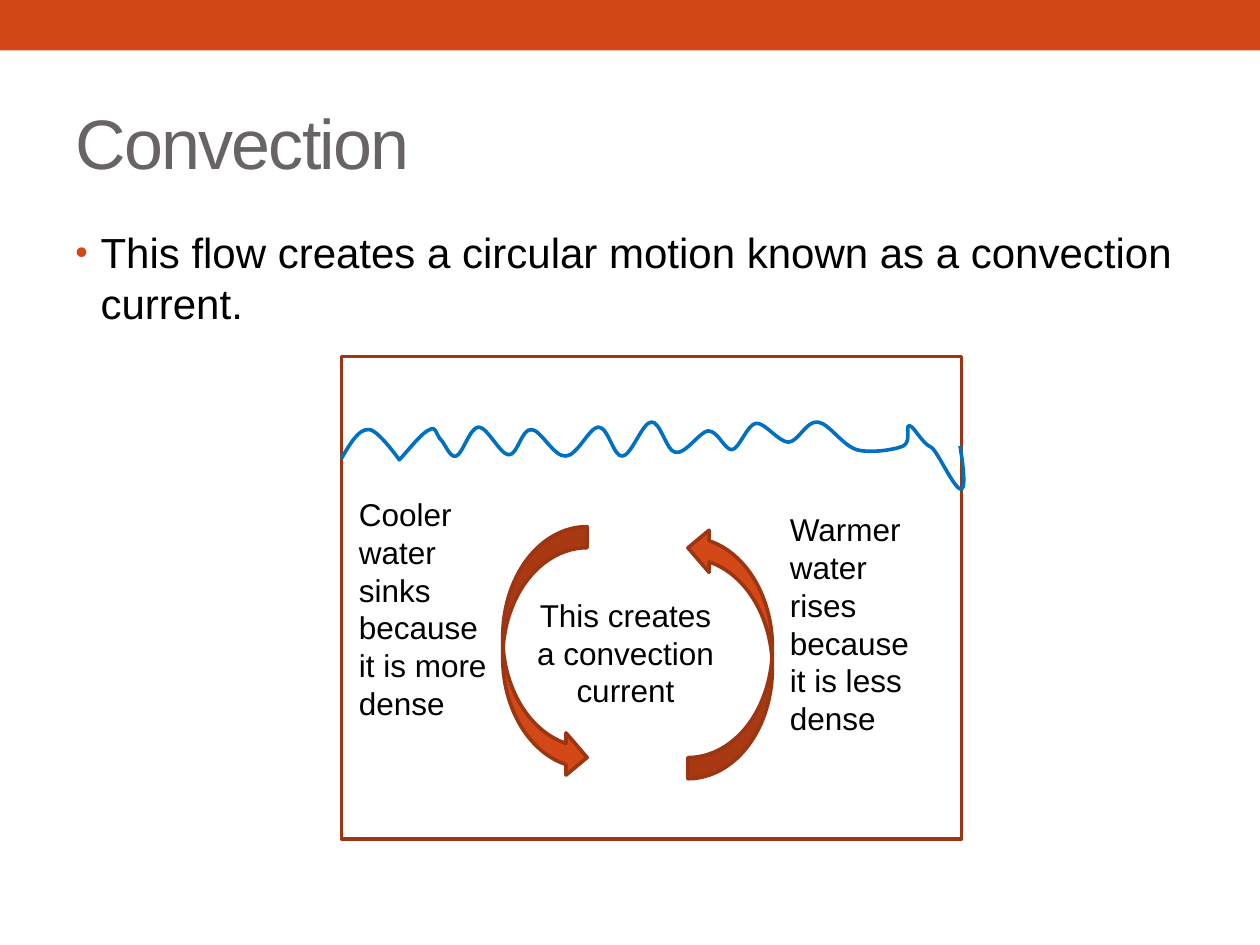
from dataclasses import dataclass

from lxml import etree
from pptx import Presentation
from pptx.dml.color import RGBColor
from pptx.enum.shapes import MSO_SHAPE
from pptx.enum.text import MSO_ANCHOR, PP_ALIGN
from pptx.oxml.ns import qn
from pptx.util import Inches, Pt

RECTANGLE = MSO_SHAPE.RECTANGLE
CURVED_ARROW = MSO_SHAPE.CURVED_RIGHT_ARROW
LEFT, CENTER = PP_ALIGN.LEFT, PP_ALIGN.CENTER
TOP, MIDDLE = MSO_ANCHOR.TOP, MSO_ANCHOR.MIDDLE

COLORS = {
    "accent": "D34817",
    "outline": "9C3511",
    "water": "0070C0",
    "title": "696464",
    "text": "000000",
}
FONT = "Arial"
LINE_WIDTH = 2.08

WAVE_START = (2.71, 3.64)
WAVE_CURVES = [
    (2.78, 3.52, 2.85, 3.4, 2.93, 3.41), (3, 3.41, 3.17, 3.65, 3.17, 3.65),
    (3.21, 3.61, 3.35, 3.43, 3.41, 3.41), (3.46, 3.38, 3.46, 3.44, 3.49, 3.48),
    (3.53, 3.51, 3.57, 3.64, 3.62, 3.62), (3.67, 3.61, 3.73, 3.39, 3.8, 3.39),
    (3.87, 3.39, 3.97, 3.61, 4.04, 3.61), (4.11, 3.61, 4.14, 3.4, 4.22, 3.41),
    (4.29, 3.41, 4.4, 3.63, 4.49, 3.62), (4.58, 3.62, 4.68, 3.39, 4.75, 3.39),
    (4.83, 3.39, 4.87, 3.63, 4.94, 3.62), (5.01, 3.62, 5.1, 3.35, 5.17, 3.35),
    (5.24, 3.34, 5.29, 3.58, 5.36, 3.59), (5.44, 3.61, 5.55, 3.43, 5.62, 3.42),
    (5.7, 3.42, 5.75, 3.57, 5.81, 3.57), (5.87, 3.56, 5.93, 3.37, 6, 3.36),
    (6.07, 3.35, 6.18, 3.51, 6.26, 3.51), (6.34, 3.5, 6.4, 3.34, 6.49, 3.35),
    (6.58, 3.36, 6.68, 3.53, 6.8, 3.57), (6.91, 3.6, 7.1, 3.57, 7.17, 3.54),
    (7.24, 3.5, 7.18, 3.37, 7.22, 3.38), (7.25, 3.38, 7.32, 3.52, 7.39, 3.55),
    (7.46, 3.58, 7.74, 4.29, 7.62, 3.54),
]


@dataclass
class Area:
    left: float
    top: float
    width: float
    height: float

    def lengths(self):
        return [Inches(n) for n in (self.left, self.top, self.width, self.height)]


@dataclass
class Label:
    text: str
    area: Area
    align: PP_ALIGN = LEFT


@dataclass
class Figure:
    kind: MSO_SHAPE
    area: Area
    fill: str = ""
    line: str = ""
    rotation: float = 0


LABELS = [
    Label("Cooler water sinks because it is more dense", Area(2.75, 3.88, 1.33, 1.92)),
    Label("Warmer water rises because it is less dense", Area(6.17, 4, 1.25, 1.92)),
    Label("This creates a convection current", Area(4.13, 4.68, 1.67, 1.01), CENTER),
]
BAND = Figure(RECTANGLE, Area(0, 0, 10, 0.4), fill="accent")
TANK = Figure(RECTANGLE, Area(2.71, 2.83, 4.92, 3.83), line="outline")
WAVE_AREA = Area(2.71, 3.35, 4.94, 0.53)
ARROWS = [
    Figure(CURVED_ARROW, Area(left, 4.18, 0.67, 2), "accent", "outline", rotation)
    for left, rotation in ((3.99, 0), (5.46, 180))
]


def color(name: str) -> RGBColor:
    return RGBColor.from_string(COLORS[name])


def style_shape(shape, fill: str = "", line: str = "") -> None:
    shape.shadow.inherit = False
    if fill:
        shape.fill.solid()
        shape.fill.fore_color.rgb = color(fill)
    else:
        shape.fill.background()
    if line:
        shape.line.color.rgb = color(line)
        shape.line.width = Pt(LINE_WIDTH)
    else:
        shape.line.fill.background()


def draw_figure(page, figure: Figure) -> None:
    shape = page.shapes.add_shape(figure.kind, *figure.area.lengths())
    shape.rotation = figure.rotation
    style_shape(shape, figure.fill, figure.line)


def draw_wave(page) -> None:
    builder = page.shapes.build_freeform(*[Inches(n) for n in WAVE_START])
    anchors = [tuple(Inches(n) for n in curve[-2:]) for curve in WAVE_CURVES]
    builder.add_line_segments(anchors, close=False)
    wave = builder.convert_to_shape()
    left, top, wave.width, wave.height = WAVE_AREA.lengths()
    outline = next(wave._element.iter(qn("a:path")))
    outline.set("w", str(wave.width))
    outline.set("h", str(wave.height))
    for segment, curve in zip(outline.findall(qn("a:lnTo")), WAVE_CURVES):
        bezier = etree.Element(qn("a:cubicBezTo"))
        for x, y in zip(curve[::2], curve[1::2]):
            etree.SubElement(bezier, qn("a:pt"),
                             x=str(Inches(x) - left), y=str(Inches(y) - top))
        outline.replace(segment, bezier)
    style_shape(wave, line="water")


def add_text(page, text: str, area: Area, *, size: float = 18, ink: str = "text",
             align: PP_ALIGN = LEFT, anchor: MSO_ANCHOR = TOP, tracking: float = 0):
    box = page.shapes.add_textbox(*area.lengths())
    frame = box.text_frame
    frame.word_wrap = True
    frame.vertical_anchor = anchor
    para = frame.paragraphs[0]
    para.alignment = align
    span = para.add_run()
    span.text = text
    span.font.name = FONT
    span.font.size = Pt(size)
    span.font.color.rgb = color(ink)
    if tracking:
        span.font._element.set("spc", str(round(tracking * 100)))
    return para


def add_bullet(para, indent: float, ink: str, percent: int) -> None:
    properties = para._p.get_or_add_pPr()
    properties.set("marL", str(Inches(indent)))
    properties.set("indent", str(-Inches(indent)))
    bullet_color = etree.SubElement(properties, qn("a:buClr"))
    etree.SubElement(bullet_color, qn("a:srgbClr"), val=COLORS[ink])
    etree.SubElement(properties, qn("a:buSzPct"), val=str(percent * 1000))
    etree.SubElement(properties, qn("a:buFont"), typeface=FONT)
    etree.SubElement(properties, qn("a:buChar"), char="•")


def main() -> None:
    """Build the convection slide and save it."""
    deck = Presentation()
    deck.slide_width, deck.slide_height = Inches(10), Inches(7.5)
    page = deck.slides.add_slide(deck.slide_layouts[6])
    draw_figure(page, BAND)
    add_text(page, "Convection", Area(0.5, 0.58, 9, 1.08),
             size=40, ink="title", anchor=MIDDLE, tracking=-1)
    para = add_text(
        page, "This flow creates a circular motion known as a convection current.",
        Area(0.5, 1.75, 9, 5.33), size=24)
    para.space_before = Pt(4.8)
    add_bullet(para, 0.2, "accent", 85)
    draw_figure(page, TANK)
    draw_wave(page)
    for arrow in ARROWS:
        draw_figure(page, arrow)
    for label in LABELS:
        add_text(page, label.text, label.area, align=label.align)
    deck.save("out.pptx")


if __name__ == "__main__":
    main()
